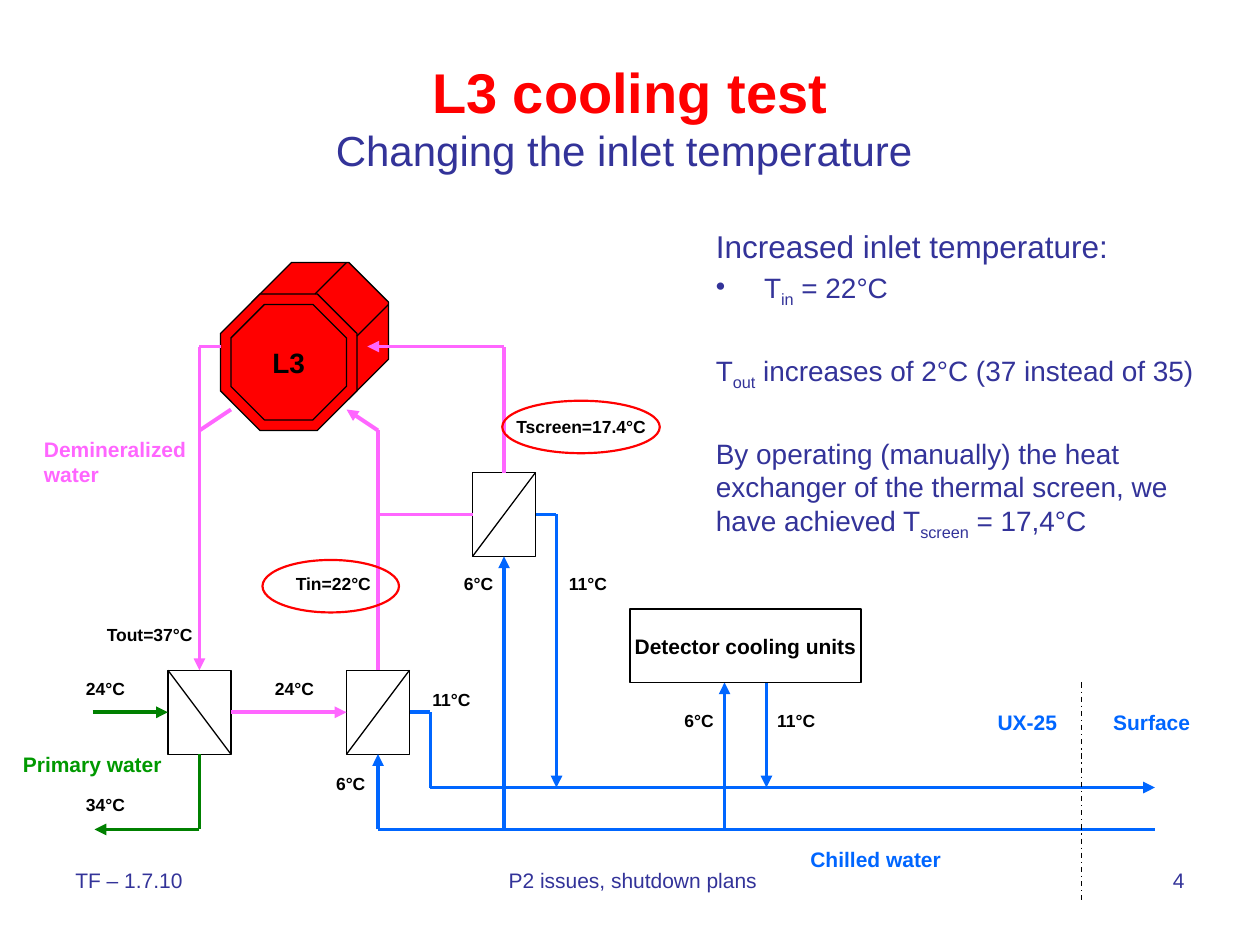
"""Build the L3 cooling test slide with its water circuit diagram."""
from itertools import pairwise

from lxml.etree import SubElement
from pptx import Presentation
from pptx.dml.color import RGBColor
from pptx.enum.dml import MSO_LINE_DASH_STYLE as DASH
from pptx.enum.shapes import MSO_CONNECTOR, MSO_SHAPE
from pptx.enum.text import MSO_ANCHOR, MSO_AUTO_SIZE, PP_ALIGN
from pptx.oxml.ns import qn
from pptx.util import Pt

COLOURS = {
    "text": "333399", "title": "FF0000", "ink": "000000", "demineralized": "FF66FF",
    "primary": "008000", "primary_label": "009900", "chilled": "0066FF", "detector": "FF0000",
}
EXCHANGER_W, EXCHANGER_H = 36, 48
EXCHANGERS = [(96, 383, True), (198, 383, False), (270, 270, False)]
PIPES = [
    ("primary", True, [(53, 407), (96, 407)]),
    ("primary", True, [(114, 431), (114, 474), (54, 474)]),
    ("demineralized", True, [(132, 407), (198, 407)]),
    ("demineralized", True, [(126, 198), (114, 198), (114, 246), (114, 383)]),
    ("demineralized", False, [(114, 246), (132, 234)]),
    ("demineralized", True, [(216, 383), (216, 246), (198, 234)]),
    ("demineralized", False, [(270, 294), (216, 294)]),
    ("demineralized", True, [(288, 270), (288, 198), (210, 198)]),
    ("chilled", True, [(660, 474), (216, 474), (216, 431)]),
    ("chilled", True, [(288, 474), (288, 318)]),
    ("chilled", True, [(414, 474), (414, 390)]),
    ("chilled", True, [(234, 407), (246, 407), (246, 450), (660, 450)]),
    ("chilled", True, [(306, 294), (318, 294), (318, 450)]),
    ("chilled", True, [(438, 390), (438, 450)]),
]
TEMPERATURES = [
    ("Tin=22°C", 162, 324, 58), ("Tscreen=17.4°C", 288, 234, 89), ("Tout=37°C", 54, 353, 64),
    ("24°C", 42, 384, 37), ("34°C", 42, 450, 37), ("24°C", 150, 384, 37),
    ("6°C", 185, 438, 31), ("6°C", 258, 324, 31), ("6°C", 384, 402, 31),
    ("11°C", 318, 324, 37), ("11°C", 240, 390, 37), ("11°C", 437, 402, 37),
]
CIRCUITS = [
    ("Primary water", 6, 426, 94, "primary_label"), ("Chilled water", 456, 480, 89, "chilled"),
    ("UX-25", 563, 402, 52, "chilled"), ("Surface", 629, 402, 62, "chilled"),
]
FOOTERS = [
    ("TF – 1.7.10", 36, 180, PP_ALIGN.LEFT),
    (" P2 issues, shutdown plans", 246, 228, PP_ALIGN.CENTER),
    ("4", 516, 168, PP_ALIGN.RIGHT),
]
FINDINGS = [
    (18, 2, ["Increased inlet temperature:"]),
    (16, 3.5, ["T", "in", " = 22°C"]),
    (16, 25.5, ["T", "out", " increases of 2°C (37 instead of 35)"]),
    (16, 25.5, ["By operating (manually) the heat exchanger of the thermal screen, "
                "we have achieved T", "screen", " = 17,4°C"]),
]


def assign(target, values):
    """Set each named attribute of the target."""
    for name, value in values.items():
        setattr(target, name, value)


def add_run(paragraph, text, size, colour, bold=False):
    """Append a formatted run to a paragraph."""
    run = paragraph.add_run()
    run.text = text
    assign(run.font, {"name": "Arial", "size": Pt(size), "bold": bold})
    run.font.color.rgb = RGBColor.from_string(COLOURS[colour])
    return run


def add_frame(slide, box, **values):
    """Add a text box and return its text frame."""
    frame = slide.shapes.add_textbox(*map(Pt, box)).text_frame
    assign(frame, {"word_wrap": True, **values})
    return frame


def add_label(slide, text, box, size, colour, wrap=False):
    """Add a bold diagram label."""
    frame = add_frame(slide, box, word_wrap=wrap, auto_size=MSO_AUTO_SIZE.SHAPE_TO_FIT_TEXT)
    add_run(frame.paragraphs[0], text, size, colour, True)


def add_outline(shapes, kind, box, colour="ink", width=0.75, fill=None):
    """Add a preset shape with an outline and an optional fill."""
    outline = shapes.add_shape(kind, *map(Pt, box))
    outline.shadow.inherit = False
    if fill:
        outline.fill.solid()
        outline.fill.fore_color.rgb = RGBColor.from_string(COLOURS[fill])
    else:
        outline.fill.background()
    outline.line.color.rgb = RGBColor.from_string(COLOURS[colour])
    outline.line.width = Pt(width)
    return outline


def add_caption(outline, text, size):
    """Centre a bold caption in a shape."""
    assign(outline.text_frame, {"word_wrap": False, "vertical_anchor": MSO_ANCHOR.MIDDLE})
    caption = outline.text_frame.paragraphs[0]
    caption.alignment = PP_ALIGN.CENTER
    add_run(caption, text, size, "ink", True)


def add_line(shapes, start, end, colour="ink", width=0.75, arrow=False):
    """Add a straight line, optionally with an arrowhead at its end."""
    line = shapes.add_connector(MSO_CONNECTOR.STRAIGHT, *map(Pt, (*start, *end)))
    line.line.color.rgb = RGBColor.from_string(COLOURS[colour])
    line.line.width = Pt(width)
    if arrow:
        SubElement(line.line._get_or_add_ln(), qn("a:tailEnd"), type="triangle")
    SubElement(line._element.spPr, qn("a:effectLst"))
    return line


def add_exchanger(slide, left, top, falling):
    """Add a heat exchanger and return its joints by position."""
    right, bottom = left + EXCHANGER_W, top + EXCHANGER_H
    body = add_outline(slide.shapes, MSO_SHAPE.RECTANGLE, (left, top, EXCHANGER_W, EXCHANGER_H))
    first, last = (top, bottom) if falling else (bottom, top)
    add_line(slide.shapes, (left, first), (right, last))
    middle, centre = left + EXCHANGER_W // 2, top + EXCHANGER_H // 2
    sides = [(middle, top), (left, centre), (middle, bottom), (right, centre)]
    return {side: (body, site) for site, side in enumerate(sides)}


def add_pipe(slide, joints, water, flows, points):
    """Add a pipe through the points, joined to exchangers it meets."""
    for start, end in pairwise(points):
        section = add_line(slide.shapes, start, end, water, 2.25, flows and end == points[-1])
        if start in joints:
            section.begin_connect(*joints[start])
        if end in joints:
            section.end_connect(*joints[end])


def add_detector(slide):
    """Add the octagonal L3 detector as a group."""
    parts = slide.shapes.add_group_shape().shapes
    for box in [(144, 150, 78, 78), (126, 168, 78, 78), (132, 174, 66, 66)]:
        face = add_outline(parts, MSO_SHAPE.OCTAGON, box, fill="detector")
        face.adjustments[0] = 0.29
    add_caption(face, "L3", 16)
    for start, end in [((180, 168), (198, 150)), ((204, 192), (222, 174))]:
        add_line(parts, start, end)


def add_title(slide):
    """Add the title and its subtitle line."""
    frame = add_frame(slide, (36, 21.6, 648, 90), vertical_anchor=MSO_ANCHOR.MIDDLE)
    title = frame.paragraphs[0]
    title.alignment = PP_ALIGN.CENTER
    add_run(title, "L3 cooling test", 32, "title", True)
    title.add_line_break()
    add_run(title, "Changing the inlet temperature ", 24, "text")


def add_findings(slide):
    """Add the findings, with every second run as a subscript."""
    frame = add_frame(slide, (402, 126, 300, 180))
    for index, (size, gap, pieces) in enumerate(FINDINGS):
        finding = frame.add_paragraph() if index else frame.paragraphs[0]
        finding.space_before = Pt(gap)
        for position, piece in enumerate(pieces):
            run = add_run(finding, piece, size, "text")
            if position % 2:
                run._r.get_or_add_rPr().set("baseline", "-25000")
    bullet = frame.paragraphs[1]._p.get_or_add_pPr()
    bullet.set("marL", str(Pt(27.5)))
    bullet.set("indent", str(-Pt(27.5)))
    SubElement(bullet, qn("a:buChar"), char="•")


def main():
    """Assemble and save the slide."""
    deck = Presentation()
    assign(deck, {"slide_width": Pt(720), "slide_height": Pt(540)})
    slide = deck.slides.add_slide(deck.slide_layouts[6])
    for text, left, width, alignment in FOOTERS:
        footer = add_frame(slide, (left, 492, width, 37.5)).paragraphs[0]
        footer.alignment = alignment
        add_run(footer, text, 12, "text")
    add_title(slide)
    add_findings(slide)
    add_detector(slide)
    joints = {}
    for exchanger in EXCHANGERS:
        joints.update(add_exchanger(slide, *exchanger))
    for pipe in PIPES:
        add_pipe(slide, joints, *pipe)
    units = add_outline(slide.shapes, MSO_SHAPE.RECTANGLE, (360, 348, 132, 42))
    add_caption(units, "Detector cooling units", 12)
    for text, left, top, width in TEMPERATURES:
        add_label(slide, text, (left, top, width, 19.4), 10, "ink")
    for text, left, top, width, colour in CIRCUITS:
        add_label(slide, text, (left, top, width, 21.6), 12, colour)
    add_label(slide, "Demineralized water", (18, 246, 96, 36), 12, "demineralized", True)
    for highlight in [(150, 320, 78, 30), (287, 229, 90, 30)]:
        add_outline(slide.shapes, MSO_SHAPE.OVAL, highlight, "title", 1.25)
    boundary = add_line(slide.shapes, (618, 390), (618, 516))
    boundary.line.dash_style = DASH.DASH_DOT
    deck.save("out.pptx")


if __name__ == "__main__":
    main()
